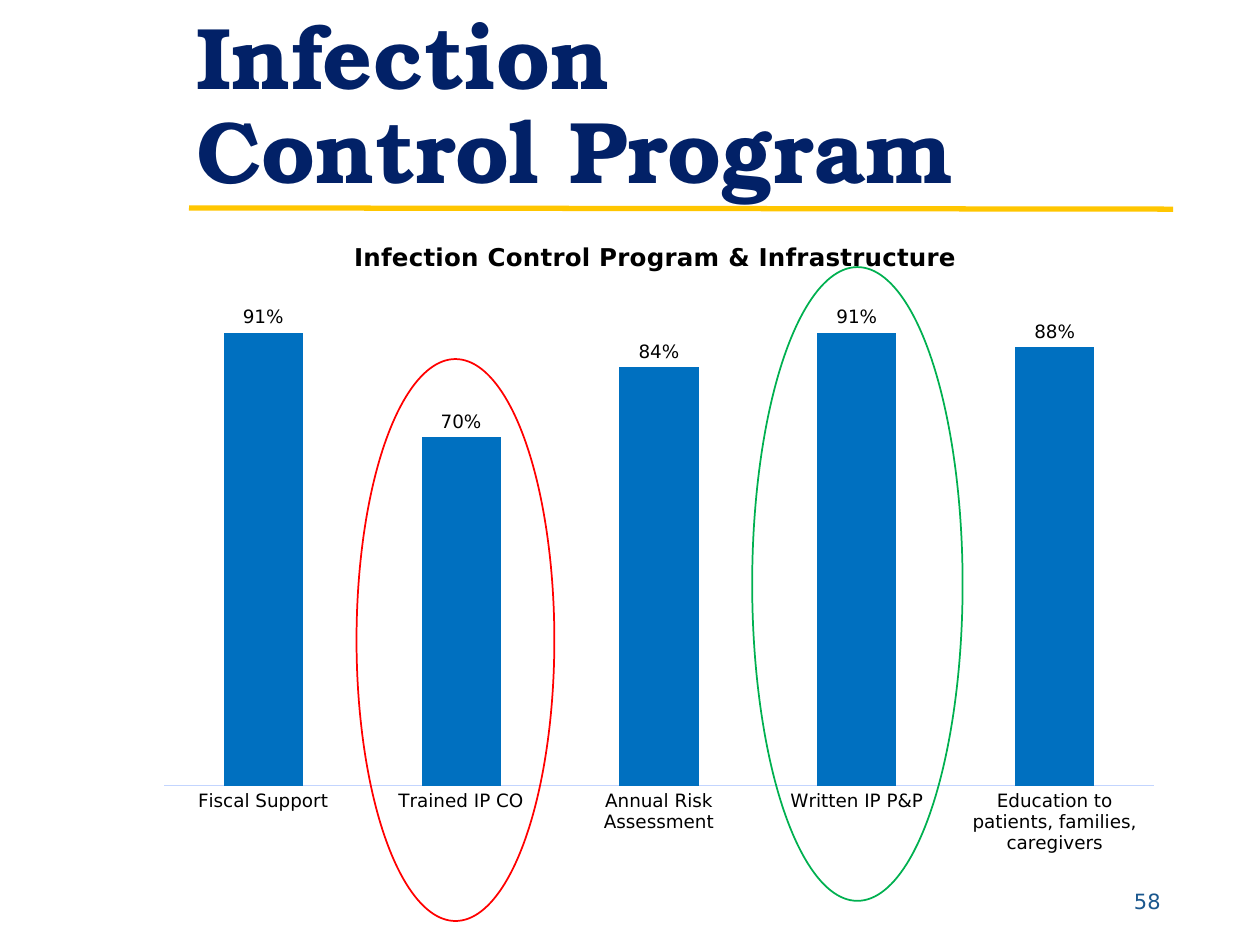
from pptx import Presentation
from pptx.chart.data import CategoryChartData
from pptx.dml.color import RGBColor
from pptx.enum.chart import XL_CHART_TYPE, XL_LABEL_POSITION, XL_TICK_MARK
from pptx.enum.shapes import MSO_CONNECTOR, MSO_SHAPE
from pptx.enum.text import MSO_ANCHOR, MSO_AUTO_SIZE, PP_ALIGN
from pptx.oxml import parse_xml
from pptx.oxml.ns import nsdecls, qn
from pptx.util import Inches, Pt
from lxml.etree import SubElement

COLORS = {
    "navy": "022167", "gold": "FFC600", "number": "1A578E", "black": "000000",
    "bar": "0070C0", "axis": "C3D5FE", "red": "FF0000", "green": "00B050",
}
BODY = "DejaVu Sans"


def style(font, size, color, name=BODY, bold=False):
    font.size = Pt(size)
    font.name = name
    font.bold = bold
    font.color.rgb = RGBColor.from_string(COLORS[color])


def place(parent, index, target="", **fractions):
    for layout in parent.findall(qn("c:layout")):
        parent.remove(layout)
    modes = "".join(f'<c:{axis}Mode val="edge"/>' for axis in "xy")
    sizes = "".join(f'<c:{key} val="{value}"/>' for key, value in fractions.items())
    parent.insert(index, parse_xml(
        f'<c:layout {nsdecls("c")}><c:manualLayout>{target}{modes}{sizes}'
        "</c:manualLayout></c:layout>"))


prs = Presentation()
prs.slide_width = Inches(10)
prs.slide_height = Inches(7.5)
slide = prs.slides.add_slide(prs.slide_layouts[5])

rule = slide.shapes.add_connector(
    MSO_CONNECTOR.STRAIGHT, Inches(1.5), Inches(1.65), Inches(9.31), Inches(1.66))
rule.line.color.rgb = RGBColor.from_string(COLORS["gold"])
rule.line.width = Pt(3)
SubElement(rule._element.spPr, qn("a:effectLst"))

title = slide.shapes.title
title.left, title.top = Inches(1.46), Inches(0.21)
title.width, title.height = Inches(9.24), Inches(1.45)
title.text_frame.text = "Infection \vControl Program"
title.text_frame.auto_size = MSO_AUTO_SIZE.NONE
title.text_frame.vertical_anchor = MSO_ANCHOR.BOTTOM
heading = title.text_frame.paragraphs[0]
heading.alignment = PP_ALIGN.LEFT
heading.line_spacing = 0.9
style(heading.font, 50, "navy", "TeX Gyre Bonum", True)

page_number = slide.shapes.add_textbox(Inches(8), Inches(6.95), Inches(1.31), Inches(0.4))
page_number.text_frame.word_wrap = True
page_number.text_frame.vertical_anchor = MSO_ANCHOR.MIDDLE
page_number.text_frame.text = "58"
number = page_number.text_frame.paragraphs[0]
number.alignment = PP_ALIGN.RIGHT
style(number.font, 12, "number")

program_data = CategoryChartData(number_format="0%")
program_data.categories = [
    "Fiscal Support", "Trained IP CO", "Annual Risk Assessment", "Written IP P&P",
    "Education to patients, families, caregivers",
]
program_data.add_series("Series 1", [0.91, 0.7, 0.84, 0.91, 0.88])
chart = slide.shapes.add_chart(
    XL_CHART_TYPE.COLUMN_CLUSTERED, Inches(1.14), Inches(1.66), Inches(8.18), Inches(5.2),
    program_data).chart
style(chart.font, 10, "navy")
chart.has_legend = False
chart.has_title = True
chart.chart_title.text_frame.text = "Infection Control Program & Infrastructure"
style(chart.chart_title.text_frame.paragraphs[0].font, 14, "black", bold=True)
place(chart.chart_title._element, 1, x=0.2, y=0.04)
place(chart._chartSpace.chart.plotArea, 0, '<c:layoutTarget val="inner"/>',
      x=0.02, y=0.12, w=0.96, h=0.76)

categories = chart.category_axis
categories.major_tick_mark = XL_TICK_MARK.NONE
categories.format.line.color.rgb = RGBColor.from_string(COLORS["axis"])
categories.format.line.width = Pt(0.75)
style(categories.tick_labels.font, 10.5, "black")

percent = chart.value_axis
percent.minimum_scale, percent.maximum_scale = 0, 1
percent.has_major_gridlines = False
percent.visible = False

bars = chart.plots[0]
bars.gap_width = 150
bars.overlap = -25
bars.vary_by_categories = False
bars.series[0].format.fill.solid()
bars.series[0].format.fill.fore_color.rgb = RGBColor.from_string(COLORS["bar"])
bars.has_data_labels = True
labels = bars.data_labels
labels.show_value = True
labels.number_format = "0%"
labels.number_format_is_linked = False
labels.position = XL_LABEL_POSITION.OUTSIDE_END
style(labels.font, 10.5, "black")

for left, top, width, height, color in [
    (2.83, 2.85, 1.57, 4.46, "red"),
    (5.97, 2.12, 1.67, 5.03, "green"),
]:
    highlight = slide.shapes.add_shape(
        MSO_SHAPE.OVAL, Inches(left), Inches(top), Inches(width), Inches(height))
    highlight.shadow.inherit = False
    highlight.fill.background()
    highlight.line.color.rgb = RGBColor.from_string(COLORS[color])
    highlight.line.width = Pt(1)

prs.save("out.pptx")
